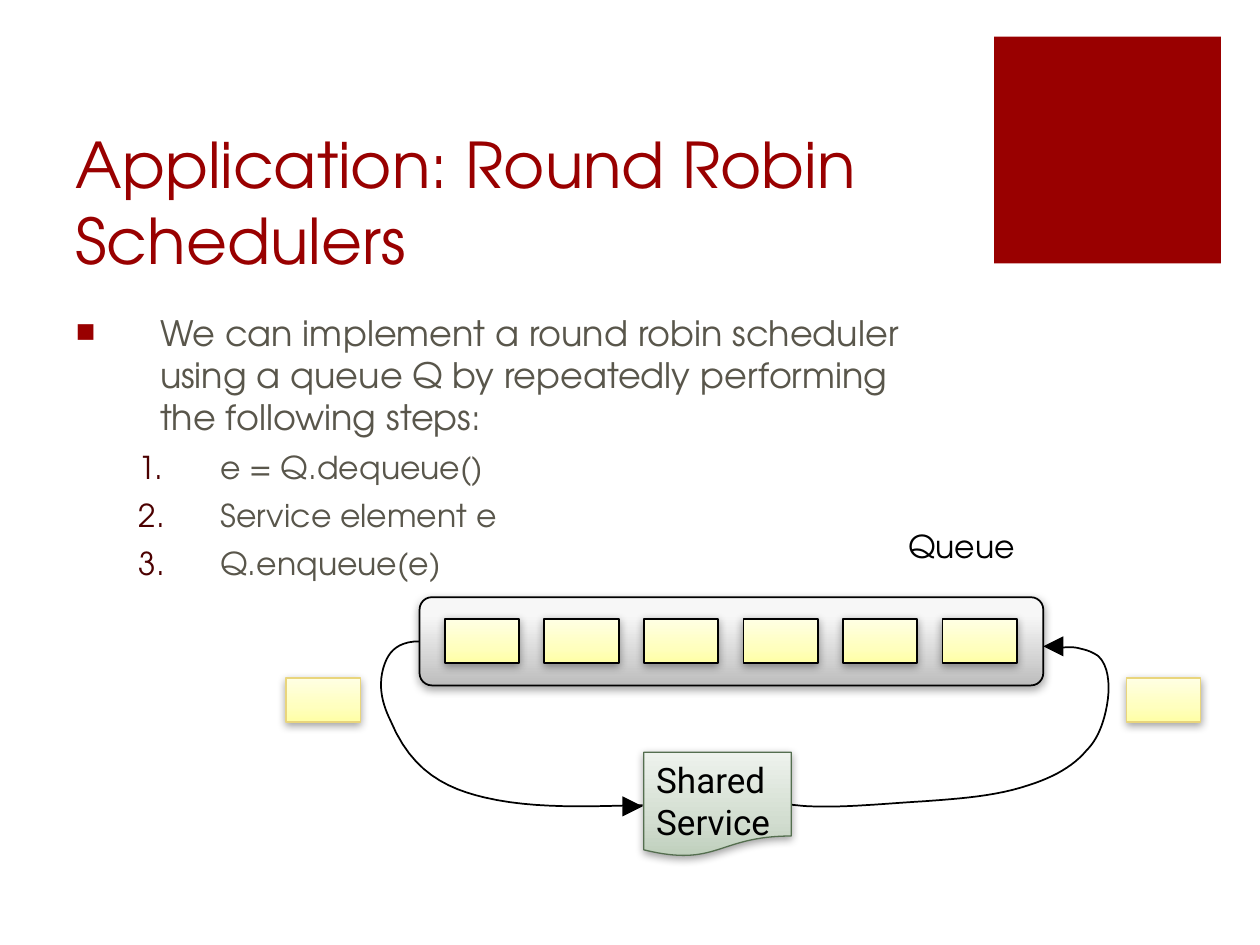
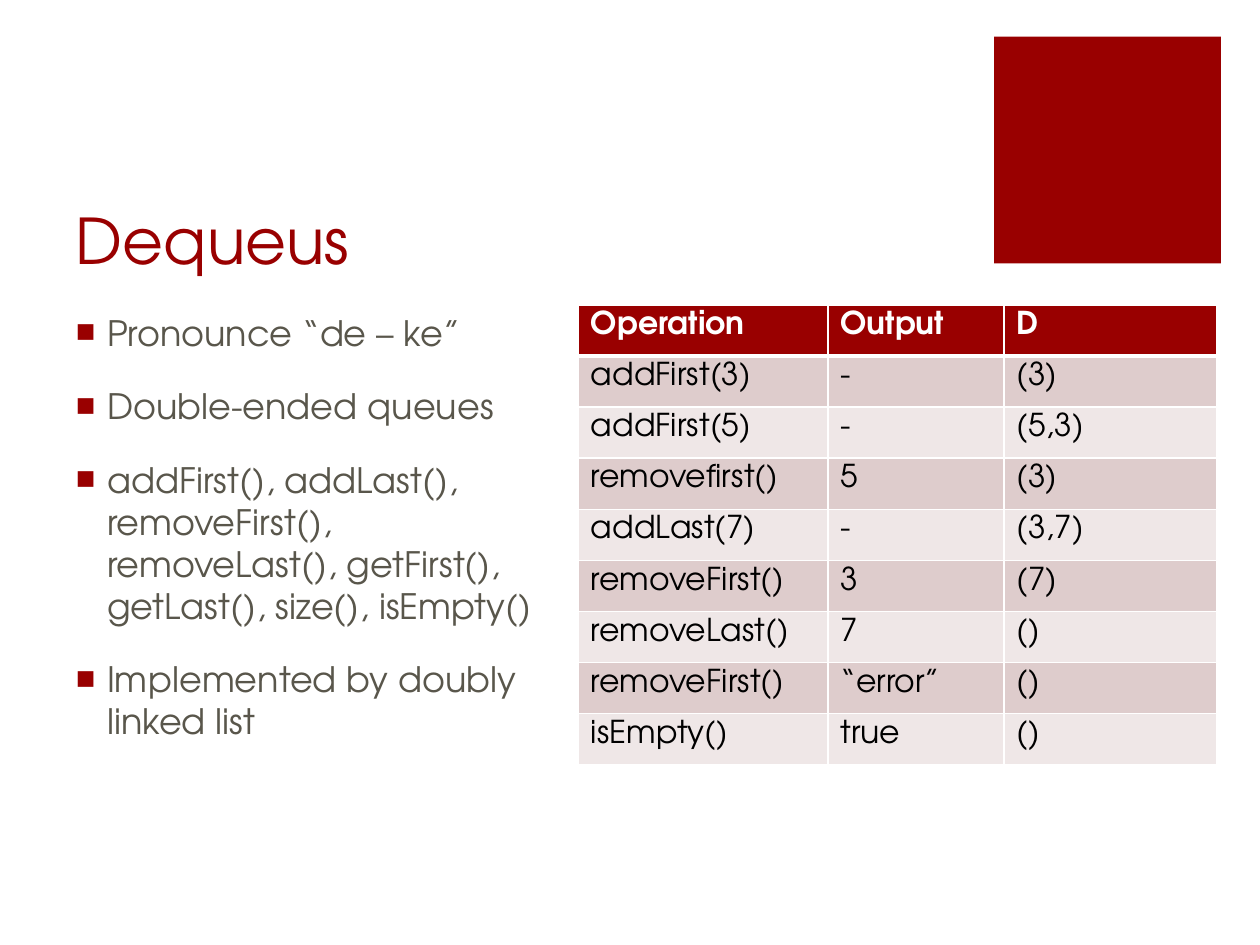
from lxml import etree
from pptx import Presentation
from pptx.dml.color import RGBColor
from pptx.enum.shapes import MSO_SHAPE
from pptx.enum.text import MSO_ANCHOR, MSO_AUTO_SIZE, PP_ALIGN
from pptx.oxml.ns import qn
from pptx.util import Inches, Pt

RECT = MSO_SHAPE.RECTANGLE
ROUND = MSO_SHAPE.ROUNDED_RECTANGLE
PAPER = MSO_SHAPE.FLOWCHART_DOCUMENT
TOP, BOTTOM = MSO_ANCHOR.TOP, MSO_ANCHOR.BOTTOM
LEFT = PP_ALIGN.LEFT
FIXED = MSO_AUTO_SIZE.NONE

FONT = "TeX Gyre Adventor"
RED, GREY, BLACK, WHITE = "990000", "59564B", "000000", "FFFFFF"
YELLOW = [(0, "FFFFA5"), (35, "FFFFBF"), (100, "FFFFE4")]
SILVER = [(0, "BDBDBD"), (80, "F7F7F7"), (100, "F8F8F8")]
GREEN = [(0, "BFCFBC"), (35, "D2DDD0"), (100, "EEF2ED")]
GOLD, MOSS = "E9D57C", "546E4F"
hue = RGBColor.from_string


def write(para, text, size=18, color=BLACK, font=FONT, bold=False,
          before=0, mark=None, tint=RED, left=0, hang=0, level=0):
    """Fill a paragraph; mark is a bullet sign, or "1." for numbers."""
    para.text = text
    para.alignment = LEFT
    para.level = level
    para.space_before = Pt(before)
    for run in para.runs:
        run.font.name, run.font.size = font, Pt(size)
        run.font.bold, run.font.color.rgb = bold, hue(color)
    if mark:
        props = para._p.get_or_add_pPr()
        props.set("marL", str(Inches(left)))
        props.set("indent", str(-Inches(hang)))
        paint_tag = etree.SubElement(props, qn("a:buClr"))
        etree.SubElement(paint_tag, qn("a:srgbClr"), val=tint)
        if mark == "1.":
            etree.SubElement(props, qn("a:buFont"), typeface=font)
            etree.SubElement(props, qn("a:buAutoNum"), type="arabicPeriod")
        else:
            etree.SubElement(props, qn("a:buSzPct"), val="80000")
            etree.SubElement(props, qn("a:buFont"), typeface=font)
            etree.SubElement(props, qn("a:buChar"), char=mark)


def paint(shape, fill=None, line=None, width=1):
    """Plain fill from a hex string; upward gradient and shadow from stops."""
    shape.shadow.inherit = False
    if fill is None:
        shape.fill.background()
    elif isinstance(fill, str):
        shape.fill.solid()
        shape.fill.fore_color.rgb = hue(fill)
    else:
        shape.fill.gradient()
        shape.fill.gradient_angle = 90
        props = shape._element.spPr
        stops = props.find(".//" + qn("a:gsLst"))
        for old in list(stops):
            stops.remove(old)
        for pos, color in fill:
            stop = etree.SubElement(stops, qn("a:gs"), pos=str(pos * 1000))
            etree.SubElement(stop, qn("a:srgbClr"), val=color)
        shade = etree.SubElement(
            props.find(qn("a:effectLst")), qn("a:outerShdw"), dir="5400000",
            blurRad=str(Pt(5)), dist=str(Pt(1.7)), rotWithShape="0")
        tone = etree.SubElement(shade, qn("a:srgbClr"), val=BLACK)
        etree.SubElement(tone, qn("a:alpha"), val="37000")
    if line:
        shape.line.color.rgb = hue(line)
        shape.line.width = Pt(width)
    else:
        shape.line.fill.background()


deck = Presentation()
deck.slide_width, deck.slide_height = Inches(10), Inches(7.5)
layout = deck.slide_layouts[1]

# Titles and body frames
pages = []
for head, wide in (("Application: Round Robin Schedulers", 7.12),
                   ("Dequeus", 4.09)):
    page = deck.slides.add_slide(layout)
    title, body = page.shapes.title, page.placeholders[1]
    for frame, top, width, height in ((title, 1, 7.12, 1.25),
                                      (body, 2.42, wide, 4.28)):
        frame.left, frame.top = Inches(0.5), Inches(top)
        frame.width, frame.height = Inches(width), Inches(height)
        frame.text_frame.auto_size = FIXED
        frame.text_frame.word_wrap = True
    title.text_frame.vertical_anchor = BOTTOM
    body.text_frame.vertical_anchor = TOP
    write(title.text_frame.paragraphs[0], head, size=36, color=RED)
    pages.append(page)
first, second = pages

# Red square, moved to the shared layout
square = first.shapes.add_shape(RECT, Inches(7.89), Inches(0.29),
                                Inches(1.8), Inches(1.8))
paint(square, RED)
layout.shapes._spTree.append(square._element)

# Slide 1: steps
frame = first.placeholders[1].text_frame
write(frame.paragraphs[0],
      "We can implement a round robin scheduler using a queue Q by "
      "repeatedly performing the following steps:",
      size=20, color=GREY, before=18, mark="■", left=0.67, hang=0.67)
for step in (" e = Q.dequeue()", " Service element e", " Q.enqueue(e)"):
    write(frame.add_paragraph(), step, color=GREY, before=6, mark="1.",
          tint="4C0000", left=1.08, hang=0.58, level=1)

# Slide 1: queue with its cells, and the two moving elements
queue = first.shapes.add_shape(ROUND, Inches(3.33), Inches(4.74),
                               Inches(4.95), Inches(0.7))
queue.adjustments[0] = 0.14
paint(queue, SILVER, BLACK)
spots = [(3.53 + 0.79 * i, 4.91, BLACK, 1) for i in range(6)]
spots += [(x, 5.38, GOLD, 0.75) for x in (2.27, 8.94)]
for x, y, edge, width in spots:
    cell = first.shapes.add_shape(RECT, Inches(x), Inches(y),
                                  Inches(0.59), Inches(0.35))
    paint(cell, YELLOW, edge, width)

# Slide 1: curved arrows, each a chain of cubic arcs
out = [(3.33, 5.09), (3.13, 5.09), (3.07, 5.2), (3.04, 5.31),
       (3, 5.46), (3.04, 5.6), (3.1, 5.72),
       (3.27, 6.13), (3.55, 6.26), (3.85, 6.33),
       (4.24, 6.42), (4.66, 6.4), (5.1, 6.39)]
back = [(6.21, 6.38), (6.4, 6.4), (6.42, 6.4), (6.44, 6.4),
        (6.72, 6.41), (6.99, 6.38), (7.33, 6.36),
        (7.6, 6.34), (7.91, 6.32), (8.17, 6.23),
        (8.36, 6.17), (8.52, 6.08), (8.62, 5.96),
        (8.68, 5.9), (8.72, 5.83), (8.75, 5.74),
        (8.81, 5.56), (8.83, 5.32), (8.72, 5.21),
        (8.68, 5.18), (8.63, 5.16), (8.58, 5.15),
        (8.52, 5.13), (8.47, 5.14), (8.39, 5.14)]
for knots, tip, tail in ((out, (5.1, 6.4), -0.16), (back, (8.28, 5.13), 0.16)):
    dots = []
    for i in range(0, len(knots) - 1, 3):
        for t in (k / 12 for k in range(1, 13)):
            u = 1 - t
            parts = (u ** 3, 3 * u * u * t, 3 * u * t * t, t ** 3)
            dots.append([Inches(sum(w * p[axis] for w, p in
                                    zip(parts, knots[i:i + 4])))
                         for axis in (0, 1)])
    pen = first.shapes.build_freeform(*map(Inches, knots[0]))
    pen.add_line_segments(dots, close=False)
    paint(pen.convert_to_shape(), line=BLACK)
    x, y = tip
    pen = first.shapes.build_freeform(Inches(x), Inches(y))
    pen.add_line_segments([(Inches(x + tail), Inches(y + side))
                           for side in (-0.08, 0.08)])
    paint(pen.convert_to_shape(), BLACK)

# Slide 1: service and queue label
service = first.shapes.add_shape(PAPER, Inches(5.11), Inches(5.97),
                                 Inches(1.17), Inches(0.83))
paint(service, GREEN, MOSS, 0.75)
service.text_frame.vertical_anchor = TOP
write(service.text_frame.paragraphs[0], "Shared \nService",
      size=20, font="Roboto")
label = first.shapes.add_textbox(Inches(7.11), Inches(4.13),
                                 Inches(1.17), Inches(0.51))
label.text_frame.word_wrap = True
write(label.text_frame.paragraphs[0], "Queue")

# Slide 2: list
frame = second.placeholders[1].text_frame
points = ("Pronounce “de – ke”", "Double-ended queues",
          "addFirst(), addLast(), removeFirst(), removeLast(), getFirst(), "
          "getLast(), size(), isEmpty()",
          "Implemented by doubly linked list")
for i, point in enumerate(points):
    para = frame.add_paragraph() if i else frame.paragraphs[0]
    write(para, point, size=20, color=GREY, before=18, mark="■",
          left=0.25, hang=0.25)

# Slide 2: table of operations
rows = [("Operation", "Output", "D"),
        ("addFirst(3)", "-", "(3)"),
        ("addFirst(5)", "-", "(5,3)"),
        ("removefirst()", "5", "(3)"),
        ("addLast(7)", "-", "(3,7)"),
        ("removeFirst()", "3", "(7)"),
        ("removeLast()", "7", "()"),
        ("removeFirst()", "“error”", "()"),
        ("isEmpty()", "true", "()")]
table = second.shapes.add_table(len(rows), 3, Inches(4.59), Inches(2.42),
                                Inches(5.07), Inches(3.65)).table
for col, width in zip(table.columns, (1.98, 1.4, 1.69)):
    col.width = Inches(width)
for r, row in enumerate(rows):
    for c, text in enumerate(row):
        cell = table.cell(r, c)
        write(cell.text_frame.paragraphs[0], text, bold=r == 0,
              color=BLACK if r else WHITE)
        props = cell._tc.get_or_add_tcPr()
        for side in "LRTB":
            thick = (r, side) in ((0, "B"), (1, "T"))
            edge = etree.SubElement(props, qn("a:ln" + side),
                                    w=str(Pt(3 if thick else 1)))
            solid = etree.SubElement(edge, qn("a:solidFill"))
            etree.SubElement(solid, qn("a:srgbClr"), val=WHITE)
        cell.fill.solid()
        band = "DECCCC" if r % 2 else "EFE7E7"
        cell.fill.fore_color.rgb = hue(band if r else RED)

deck.save("out.pptx")
